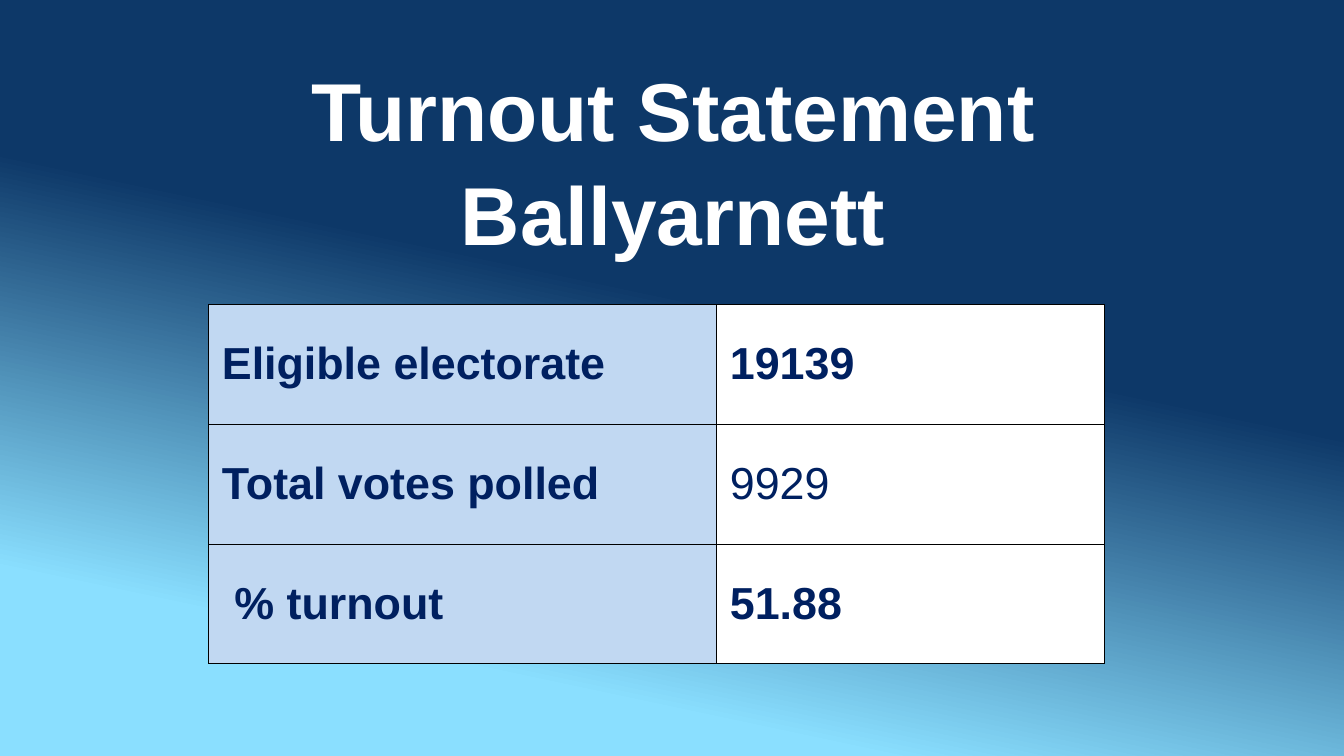
from lxml import etree
from pptx import Presentation
from pptx.dml.color import RGBColor
from pptx.enum.text import MSO_ANCHOR, MSO_AUTO_SIZE, PP_ALIGN
from pptx.oxml.ns import qn
from pptx.util import Cm, Pt

COLORS = {
    "dark_blue": "0D3868",
    "sky_blue": "8ADFFF",
    "label_fill": "C1D8F2",
    "white": "FFFFFF",
    "navy": "002060",
    "border": "000000",
}


def color(name):
    return RGBColor.from_string(COLORS[name])


def add_borders(cell):
    """Draw a thin line on all four sides; call before filling the cell."""
    properties = cell._tc.get_or_add_tcPr()
    for side in ("lnL", "lnR", "lnT", "lnB"):
        line = etree.SubElement(properties, qn(f"a:{side}"), w=str(Pt(0.5)))
        fill = etree.SubElement(line, qn("a:solidFill"))
        etree.SubElement(fill, qn("a:srgbClr"), val=COLORS["border"])


presentation = Presentation()
presentation.slide_width = Cm(25.4)
presentation.slide_height = Cm(14.29)
slide = presentation.slides.add_slide(presentation.slide_layouts[5])

# Background gradient (angle is counter-clockwise)
background = slide.background.fill
background.gradient()
background.gradient_angle = 258
stops = ((0.42, "dark_blue"), (0.82, "sky_blue"))
for stop, (position, name) in zip(background.gradient_stops, stops):
    stop.position = position
    stop.color.rgb = color(name)

# Title
title = slide.shapes.title
title.left, title.top, title.width, title.height = Cm(0.1), Cm(1.55), Cm(25.3), Cm(3.4)
frame = title.text_frame
frame.text = "Turnout Statement\nBallyarnett"
frame.word_wrap = True
frame.auto_size = MSO_AUTO_SIZE.NONE
frame.vertical_anchor = MSO_ANCHOR.BOTTOM
frame.margin_left = frame.margin_top = frame.margin_bottom = 0
frame.margin_right = Cm(0.05)
for paragraph in frame.paragraphs:
    paragraph.alignment = PP_ALIGN.CENTER
    paragraph.line_spacing = 1.05
    paragraph.font.name = "Arial"
    paragraph.font.size = Pt(44)
    paragraph.font.bold = True
    paragraph.font.color.rgb = color("white")

# Turnout table: label, value, whether the value is bold
turnout = [
    ("Eligible electorate", "19139", True),
    ("Total votes polled", "9929", False),
    (" % turnout", "51.88", True),
]
table = slide.shapes.add_table(
    len(turnout), 2, Cm(3.94), Cm(5.75), Cm(16.94), Cm(6.8)
).table
table.columns[0].width = Cm(9.6)
table.columns[1].width = Cm(7.34)

for row, (label, value, value_bold) in enumerate(turnout):
    columns = ((label, True, "label_fill"), (value, value_bold, "white"))
    for column, (text, bold, fill) in enumerate(columns):
        cell = table.cell(row, column)
        add_borders(cell)
        cell.fill.solid()
        cell.fill.fore_color.rgb = color(fill)
        cell.vertical_anchor = MSO_ANCHOR.MIDDLE
        cell.text = text
        paragraph = cell.text_frame.paragraphs[0]
        paragraph.font.name = "Arial"
        paragraph.font.size = Pt(24)
        paragraph.font.bold = bold
        paragraph.font.color.rgb = color("navy")

presentation.save("out.pptx")
